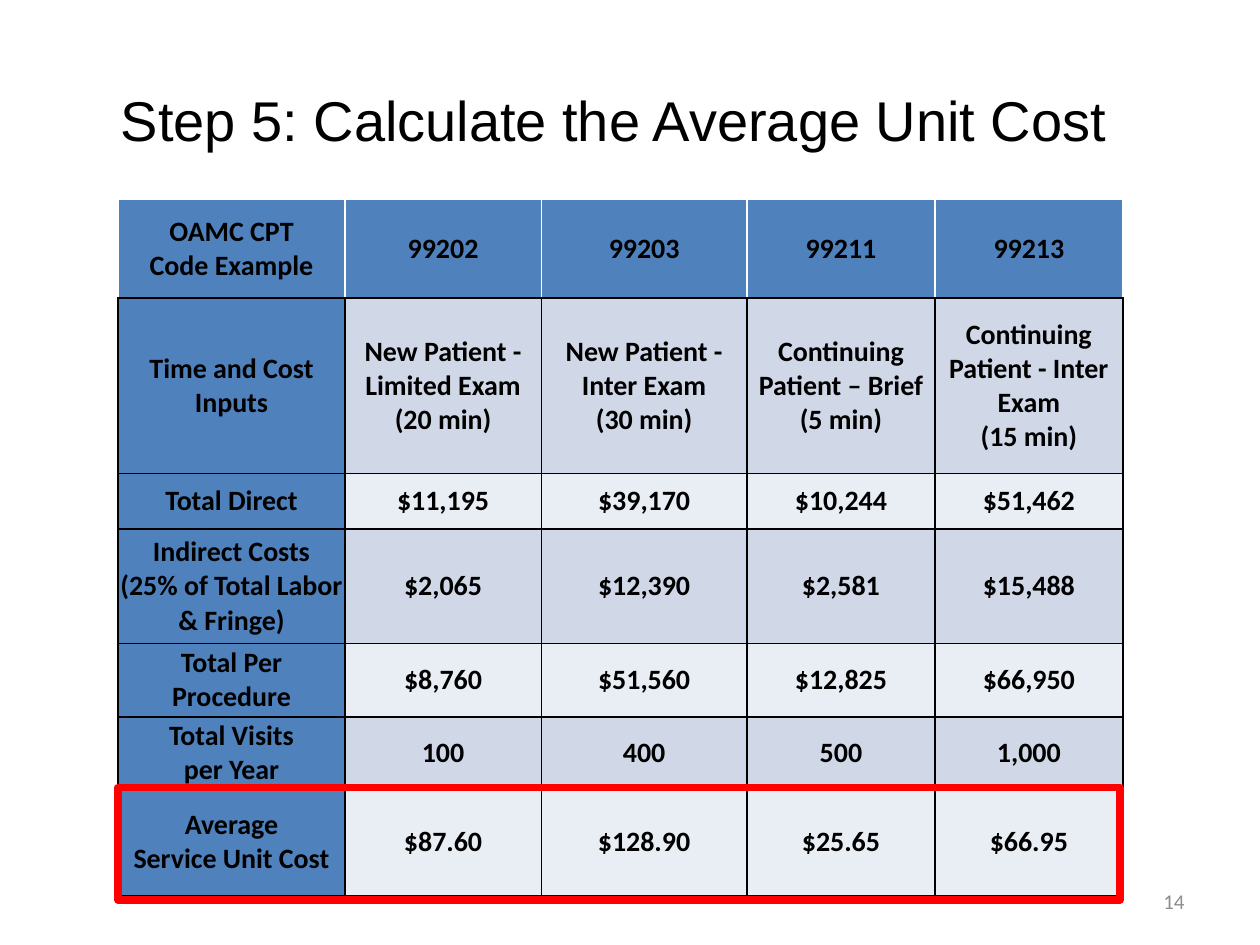
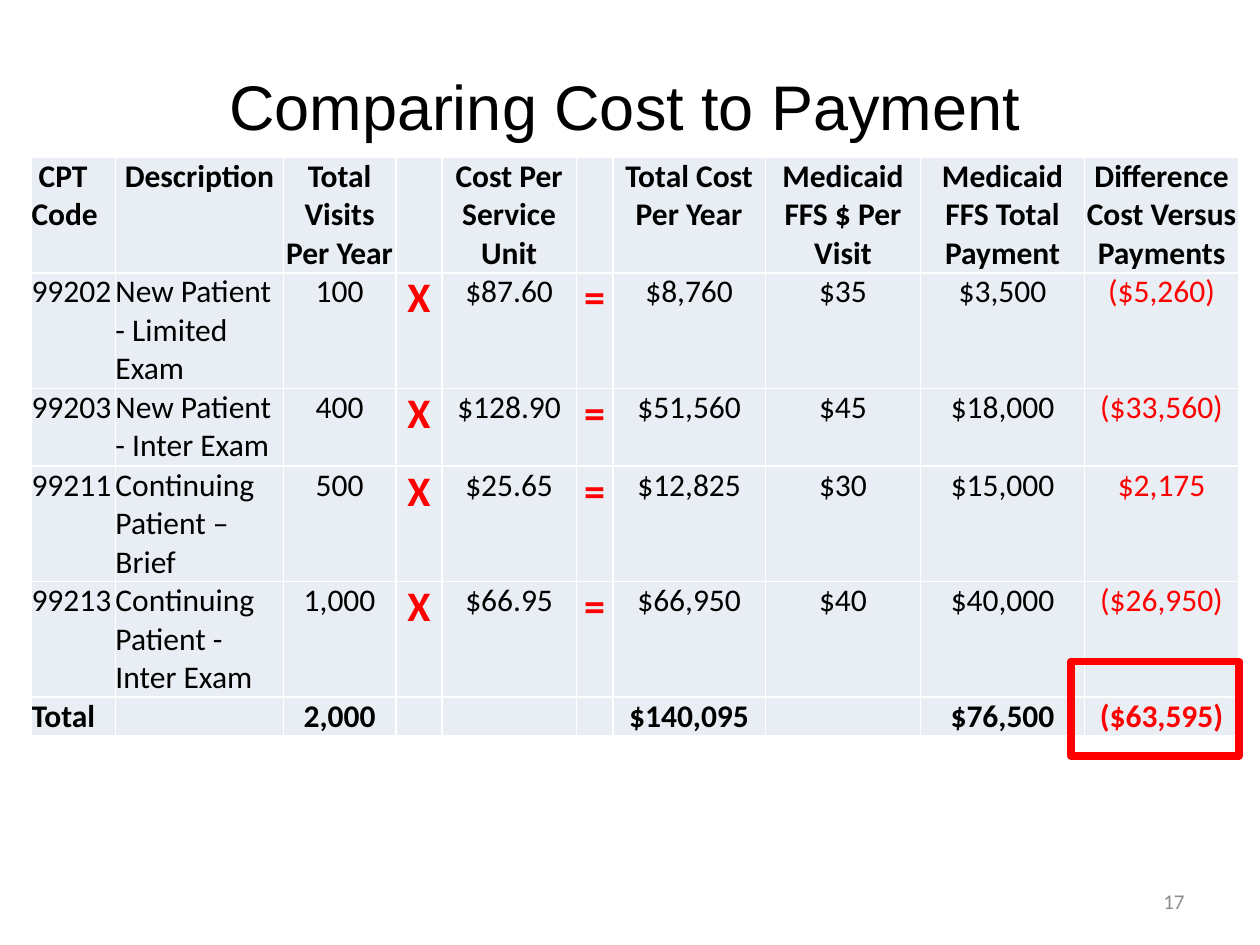
from lxml import etree
from pptx import Presentation
from pptx import util as u
from pptx.dml.color import RGBColor
from pptx.enum import shapes, text
from pptx.oxml import ns

# Shared look
BLACK, WHITE, RED, GREY = "000000", "FFFFFF", "FF0000", "8C8C8C"
BLUE, BAND_DARK, BAND_LIGHT = "4F81BD", "D0D8E8", "E9EDF4"
TITLE_FONT, BODY_FONT = "Arial", "Calibri"
LEFT, CENTER, RIGHT = text.PP_ALIGN.LEFT, text.PP_ALIGN.CENTER, text.PP_ALIGN.RIGHT
TOP, MIDDLE = text.MSO_ANCHOR.TOP, text.MSO_ANCHOR.MIDDLE
TITLE_ONLY = 5

# Slide grid: 120 columns by 90 rows, each a twelfth of an inch
SLIDE_WIDTH, SLIDE_HEIGHT = u.Inches(10), u.Inches(7.5)
UNIT = SLIDE_WIDTH / 120

UNIT_COST_ROWS = [
    ["OAMC CPT\nCode Example", "99202", "99203", "99211", "99213"],
    ["Time and Cost Inputs", "New Patient - Limited Exam\n(20 min)",
     "New Patient - Inter Exam\n(30 min)", "Continuing Patient – Brief\n(5 min)",
     "Continuing Patient - Inter Exam\n(15 min)"],
    ["Total Direct", "$11,195", "$39,170", "$10,244", "$51,462"],
    ["Indirect Costs\n(25% of Total Labor & Fringe)",
     "$2,065", "$12,390", "$2,581", "$15,488"],
    ["Total Per Procedure", "$8,760", "$51,560", "$12,825", "$66,950"],
    ["Total Visits\nper Year", "100", "400", "500", "1,000"],
    ["Average\nService Unit Cost", "$87.60", "$128.90", "$25.65", "$66.95"],
]

PAYMENT_ROWS = [
    [" CPT Code", "Description", "Total Visits Per Year", "", "Cost Per Service Unit", "",
     "Total Cost Per Year", "Medicaid FFS $ Per Visit", "Medicaid FFS Total Payment",
     "Difference Cost Versus Payments"],
    ["99202", "New Patient - Limited Exam", "100", "X", "$87.60", "=",
     "$8,760", "$35", "$3,500", "($5,260)"],
    ["99203", "New Patient - Inter Exam", "400", "X", "$128.90", "=",
     "$51,560", "$45", "$18,000", "($33,560)"],
    ["99211", "Continuing Patient – Brief", "500", "X", "$25.65", "=",
     "$12,825", "$30", "$15,000", "$2,175"],
    ["99213", "Continuing Patient - Inter Exam", "1,000", "X", "$66.95", "=",
     "$66,950", "$40", "$40,000", "($26,950)"],
    ["Total", "", "2,000", "", "", "", "$140,095", "", "$76,500", "($63,595)"],
]


def color(value):
    return RGBColor.from_string(value)


def grid(*units):
    return [u.Emu(round(unit * UNIT)) for unit in units]


def write(frame, words, size, font=BODY_FONT, ink=BLACK, bold=False, align=CENTER):
    """Fill a text frame, one paragraph for each line of words."""
    frame.text = words
    for para in frame.paragraphs:
        para.alignment = align
        para.font.name, para.font.size = font, u.Pt(size)
        para.font.bold = bold
        para.font.color.rgb = color(ink)


def add_page(deck, title, title_place, title_size, number, anchor=MIDDLE):
    page = deck.slides.add_slide(deck.slide_layouts[TITLE_ONLY])
    box = page.shapes.title
    box.left, box.top, box.width, box.height = grid(*title_place)
    box.text_frame.vertical_anchor = anchor
    box.text_frame.margin_top = box.text_frame.margin_bottom = u.Inches(0.01)
    write(box.text_frame, title, title_size, TITLE_FONT)
    # Page number
    footer = page.shapes.add_textbox(*grid(86, 83.4, 28, 4.8)).text_frame
    footer.word_wrap = True
    footer.vertical_anchor = MIDDLE
    write(footer, number, 12, ink=GREY, align=RIGHT)
    return page


def set_border(cell, sides):
    """Draw 1 pt cell edges; sides maps L, R, T and B to colours."""
    properties = cell._tc.get_or_add_tcPr()
    for side in "LRTB":
        line = etree.SubElement(properties, ns.qn(f"a:ln{side}"), w=str(u.Pt(1)))
        fill = etree.SubElement(line, ns.qn("a:solidFill"))
        etree.SubElement(fill, ns.qn("a:srgbClr"), val=sides[side])


def add_grid_table(page, rows, left, top, widths, heights, margin, anchor, style):
    """Add a table; style(row, column, words) gives fill, edges and text format."""
    place = grid(left, top, sum(widths), sum(heights))
    table = page.shapes.add_table(len(rows), len(widths), *place).table
    table.first_row = table.horz_banding = False
    for column, width in zip(table.columns, grid(*widths)):
        column.width = width
    for row, height in zip(table.rows, grid(*heights)):
        row.height = height
    for r, row in enumerate(rows):
        for c, words in enumerate(row):
            cell = table.cell(r, c)
            fill, edges, look = style(r, c, words)
            set_border(cell, edges)
            cell.fill.solid()
            cell.fill.fore_color.rgb = color(fill)
            cell.margin_left = cell.margin_right = u.Inches(margin)
            cell.margin_top = cell.margin_bottom = u.Inches(margin)
            cell.vertical_anchor = anchor
            write(cell.text_frame, words, **look)


def add_highlight(page, *place):
    frame = page.shapes.add_shape(shapes.MSO_SHAPE.RECTANGLE, *grid(*place))
    frame.shadow.inherit = False
    frame.fill.background()
    frame.line.color.rgb = color(RED)
    frame.line.width = u.Pt(4.5)


def unit_cost_style(row, column, words):
    edges = dict.fromkeys("LRTB", BLACK)
    if row == 0:
        edges.update(L=WHITE, R=WHITE, T=WHITE)
    band = BAND_DARK if row % 2 else BAND_LIGHT
    fill = BLUE if row == 0 or column == 0 else band
    return fill, edges, dict(size=16, bold=True)


def payment_style(row, column, words):
    operator = words in ("X", "=")
    difference = column == 9 and row > 0
    look = dict(
        size=24 if operator else 18,
        bold=operator or row in (0, len(PAYMENT_ROWS) - 1),
        ink=RED if operator or difference else BLACK,
        align=LEFT if column == 0 or (column == 1 and row > 0) else CENTER,
    )
    return BAND_LIGHT, dict.fromkeys("LRTB", WHITE), look


def main():
    deck = Presentation()
    deck.slide_width, deck.slide_height = SLIDE_WIDTH, SLIDE_HEIGHT

    # Average unit cost
    page = add_page(deck, "Step 5: Calculate the Average Unit Cost",
                    (1, 8, 115, 14), 32, "14", TOP)
    add_grid_table(page, UNIT_COST_ROWS, 11.25, 19,
                   [21.6, 18.7, 19.6, 17.9, 17.9],
                   [9.4, 16.7, 5.3, 10.9, 7, 6.8, 10.2],
                   0.01, MIDDLE, unit_cost_style)
    add_highlight(page, 11.25, 75, 95.4, 10.7)

    # Cost against payment
    page = add_page(deck, "Comparing Cost to Payment", (6, 4, 107, 12), 36, "17")
    three_lines, two_lines, one_line = 11, 7.4, 3.7
    add_grid_table(page, PAYMENT_ROWS, 3, 15,
                   [8, 16, 10.7, 4.4, 12.8, 3.5, 14.5, 14.8, 15.6, 14.7],
                   [three_lines, three_lines, two_lines, three_lines, three_lines, one_line],
                   0, TOP, payment_style)
    add_highlight(page, 102, 63, 16, 9)

    deck.save("out.pptx")


if __name__ == "__main__":
    main()
